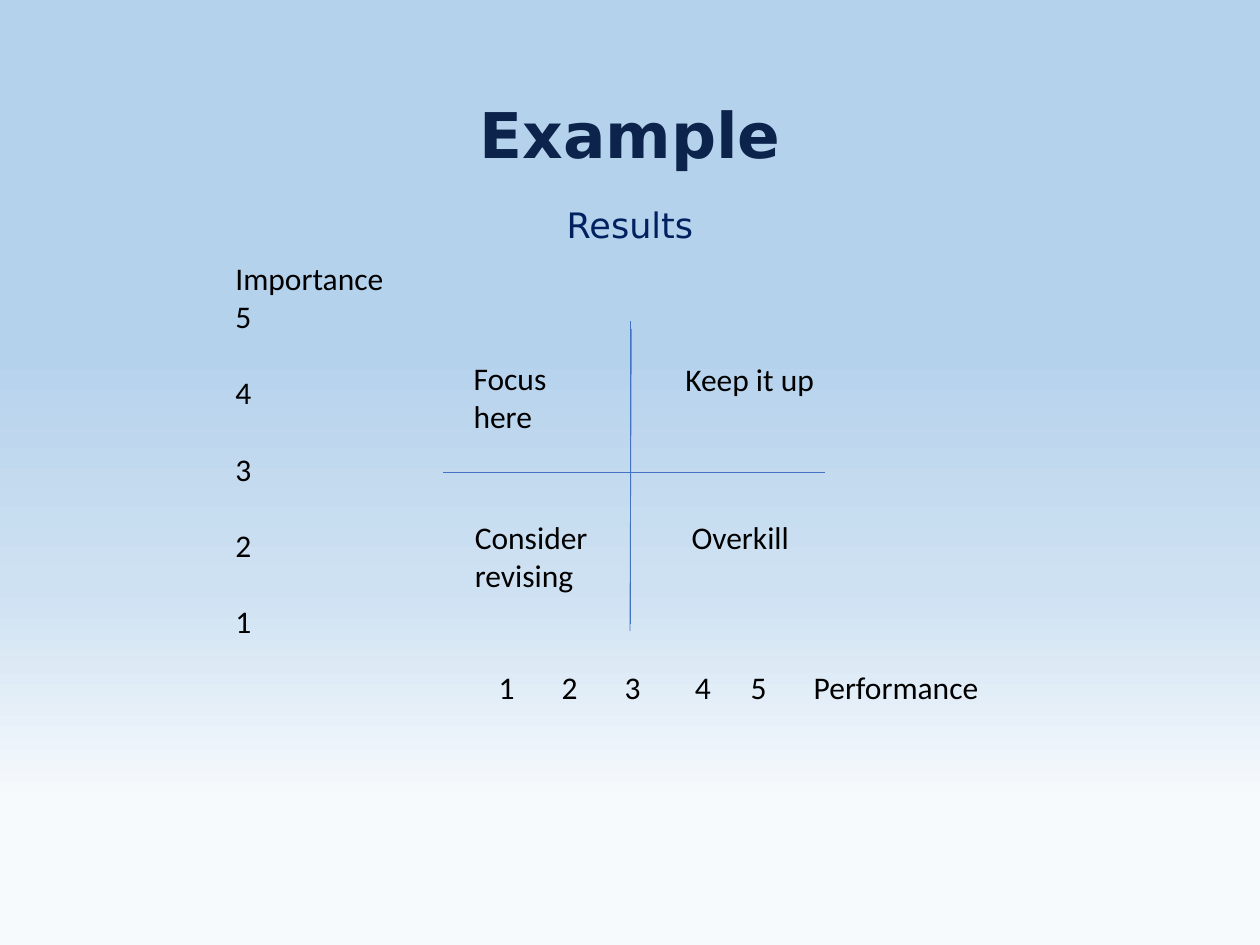
"""Build the importance and performance grid slide."""
from lxml.etree import SubElement as Sub
from pptx import Presentation
from pptx.dml.color import RGBColor
from pptx.enum.shapes import MSO_CONNECTOR as Conn
from pptx.enum.text import MSO_ANCHOR as Anchor, MSO_AUTO_SIZE as Auto, PP_ALIGN as Align
from pptx.oxml.ns import qn
from pptx.util import Emu, Pt

SKY = [(14, "B5D2EC"), (37, "B5D2EC"), (62, "CEE1F2"), (85, "F7FAFD")]
HEADS = [
    ("Example", (75, 29, 850, 161), 36, "0C234B", True, Anchor.MIDDLE),
    ("Results", (150, 160, 700, 40), 20, "002060", False, Anchor.TOP),
]
AXES = [(501, 261, 500, 501), (352, 375, 655, 375), (500, 255, 500, 495)]
ZONES = [
    ("Focus here", (366, 280, 118, 71)),
    ("Keep it up", (534, 281, 122, 71)),
    ("Overkill", (539, 406, 118, 40)),
    ("Consider revising", (367, 406, 118, 71)),
]
RISE = ["Importance", "5", "4", "3", "2", "1"]
RISE_BOX = (177, 201, 160, 313)
RUN = "1\t2\t3\t 4\t5\tPerformance"
RUN_BOX = (386, 525, 451, 40)
TAB, GAP = 50, 22


def px(n):
    return Emu(n * 9144)


def tint(code):
    return RGBColor.from_string(code)


def paint(slide):
    fill = slide.background.fill
    fill.gradient()
    fill.gradient_angle = 270
    stops = next(slide.background._cSld.iter(qn("a:gsLst")))
    for old in list(stops):
        stops.remove(old)
    for pos, code in SKY:
        stop = Sub(stops, qn("a:gs"), pos=str(pos * 1000))
        Sub(stop, qn("a:srgbClr"), val=code)


def write(para, text, size=18, face="Calibri", code="000000", bold=False):
    for i, part in enumerate(text.split("\t")):
        run = para.add_run()
        run.text = "\t" + part if i else part
        font = run.font
        font.size, font.name, font.bold = Pt(size), face, bold
        font.color.rgb = tint(code)


def frame(slide, box, auto=Auto.SHAPE_TO_FIT_TEXT):
    body = slide.shapes.add_textbox(*map(px, box)).text_frame
    body.word_wrap = True
    body.auto_size = auto
    return body


def head(slide, text, box, size, code, bold, anchor):
    body = frame(slide, box, Auto.NONE)
    body.vertical_anchor = anchor
    para = body.paragraphs[0]
    para.alignment, para.line_spacing = Align.CENTER, 0.9
    write(para, text, size, "DejaVu Sans", code, bold)


def axis(slide, ends):
    line = slide.shapes.add_connector(Conn.STRAIGHT, *map(px, ends))
    line.line.color.rgb = tint("4472C4")
    line.line.width = Pt(0.5)
    Sub(line._element.spPr, qn("a:effectLst"))


def rise(slide):
    body = frame(slide, RISE_BOX)
    for i, text in enumerate(RISE):
        para = body.add_paragraph() if i else body.paragraphs[0]
        if i > 1:
            para.space_before = Pt(GAP)
        write(para, text)


def scale(slide):
    para = frame(slide, RUN_BOX).paragraphs[0]
    tabs = Sub(para._p.get_or_add_pPr(), qn("a:tabLst"))
    for i in range(1, RUN.count("\t") + 1):
        Sub(tabs, qn("a:tab"), pos=str(px(i * TAB)), algn="l")
    write(para, RUN)


def main():
    deck = Presentation()
    deck.slide_width, deck.slide_height = px(1000), px(750)
    slide = deck.slides.add_slide(deck.slide_layouts[6])
    paint(slide)
    for item in HEADS:
        head(slide, *item)
    for ends in AXES:
        axis(slide, ends)
    rise(slide)
    scale(slide)
    for text, box in ZONES:
        write(frame(slide, box).paragraphs[0], text)
    deck.save("out.pptx")


if __name__ == "__main__":
    main()
